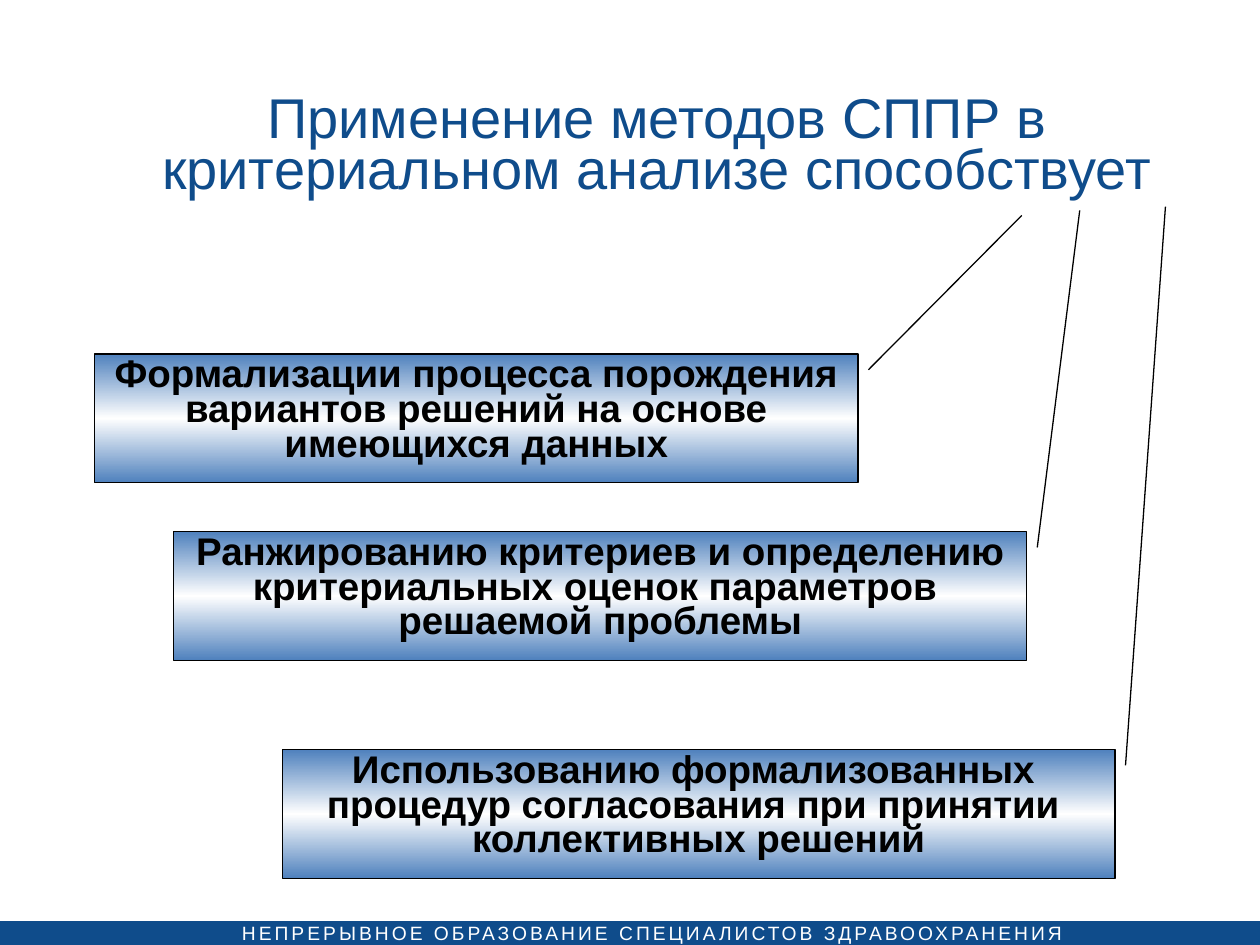
import copy
from dataclasses import dataclass

import pptx
import pptx.dml.color
import pptx.enum.shapes
import pptx.enum.text
import pptx.util

SHAPE = pptx.enum.shapes.MSO_SHAPE
ALIGN = pptx.enum.text.PP_ALIGN
ANCHOR = pptx.enum.text.MSO_ANCHOR


@dataclass
class Theme:
    font: str = "Arial"
    navy: str = "0F4C8B"
    blue: str = "4F81BD"
    white: str = "FFFFFF"
    black: str = "000000"
    head: int = 32
    body: int = 22
    foot: int = 11
    lead: float = 0.75


class Deck:
    """Holds the style and the slide; lengths are on a grid of 100 by 75."""

    def __init__(self, theme):
        self.theme = theme
        self.file = pptx.Presentation()
        self.file.slide_width = pptx.util.Inches(10)
        self.file.slide_height = pptx.util.Inches(7.5)
        self.unit = self.file.slide_width / 100
        self.slide = self.file.slides.add_slide(self.file.slide_layouts[5])

    def grid(self, *cells):
        return [round(cell * self.unit) for cell in cells]

    def color(self, name):
        return pptx.dml.color.RGBColor.from_string(name)

    def add_text(self, para, text, size, color, bold=False):
        run = para.add_run()
        run.text = text
        run.font.name = self.theme.font
        run.font.size = pptx.util.Pt(size)
        run.font.bold = bold
        run.font.color.rgb = self.color(color)
        return run

    def center(self, para):
        para.alignment = ALIGN.CENTER
        para.line_spacing = self.theme.lead

    def title(self, text, *box):
        shape = self.slide.shapes.title
        shape.left, shape.top, shape.width, shape.height = self.grid(*box)
        shape.text_frame.vertical_anchor = ANCHOR.MIDDLE
        para = shape.text_frame.paragraphs[0]
        self.center(para)
        self.add_text(para, text, self.theme.head, self.theme.navy)

    def band(self, *box):
        shape = self.slide.shapes.add_shape(SHAPE.RECTANGLE, *self.grid(*box))
        shape.shadow.inherit = False
        shape.fill.solid()
        shape.fill.fore_color.rgb = self.color(self.theme.navy)
        shape.line.fill.background()

    def footer(self, text, *box):
        frame = self.slide.shapes.add_textbox(*self.grid(*box)).text_frame
        frame.margin_left = frame.margin_right = 0
        frame.margin_top = frame.margin_bottom = 0
        frame.word_wrap = False
        run = self.add_text(frame.paragraphs[0], text,
                            self.theme.foot, self.theme.white)
        run._r.get_or_add_rPr().set("spc", "170")  # letter spacing, 1/100 pt

    def shade(self, fill):
        # Blue at both edges, white in the middle
        fill.gradient()
        fill.gradient_angle = 90
        first = fill.gradient_stops[0]._gs
        first.addnext(copy.deepcopy(first))
        names = (self.theme.blue, self.theme.white, self.theme.blue)
        for i, (stop, name) in enumerate(zip(fill.gradient_stops, names)):
            stop.position = i / 2
            stop.color.rgb = self.color(name)

    def callout(self, lines, left, top, width, tip, pad, high=10.2):
        shape = self.slide.shapes.add_shape(
            SHAPE.LINE_CALLOUT_1, *self.grid(left, top, width, high))
        shape.shadow.inherit = False
        self.shade(shape.fill)
        shape.line.color.rgb = self.color(self.theme.black)
        shape.line.width = pptx.util.Pt(0.75)
        # The pointer runs from just right of the box to its tip
        ends = (1.25 / high, 1 + 0.83 / width,
                (tip[1] - top) / high, (tip[0] - left) / width)
        for i, end in enumerate(ends):
            shape.adjustments[i] = end
        frame = shape.text_frame
        frame.word_wrap = True
        frame.vertical_anchor = ANCHOR.TOP
        frame.margin_left, frame.margin_right = self.grid(pad, pad)
        for i, line in enumerate(lines):
            para = frame.add_paragraph() if i else frame.paragraphs[0]
            self.center(para)
            self.add_text(para, line, self.theme.body, self.theme.black, True)


def main():
    deck = Deck(Theme())

    # Footer band
    deck.band(-0.4, 73.1, 100.4, 2.2)
    deck.footer("НЕПРЕРЫВНОЕ ОБРАЗОВАНИЕ СПЕЦИАЛИСТОВ ЗДРАВООХРАНЕНИЯ",
                19.2, 73.1, 66.3, 1.9)

    # Title
    deck.title("Применение методов СППР в критериальном анализе способствует",
               9.8, 5.1, 84.7, 13.4)

    # Callouts pointing at the title
    deck.callout(("Формализации процесса порождения",
                  "вариантов решений на основе",
                  "имеющихся данных"), 7.5, 28.1, 60.6, (81.1, 17.1), 1)
    deck.callout(("Ранжированию критериев и определению",
                  "критериальных оценок параметров ",
                  "решаемой проблемы"), 13.8, 42.2, 67.7, (85.7, 16.7), 1.2)
    deck.callout(("Использованию формализованных ",
                  "процедур согласования при принятии ",
                  "коллективных решений"), 22.4, 59.5, 66.1, (92.5, 16.4), 1.2)

    deck.file.save("out.pptx")


if __name__ == "__main__":
    main()
